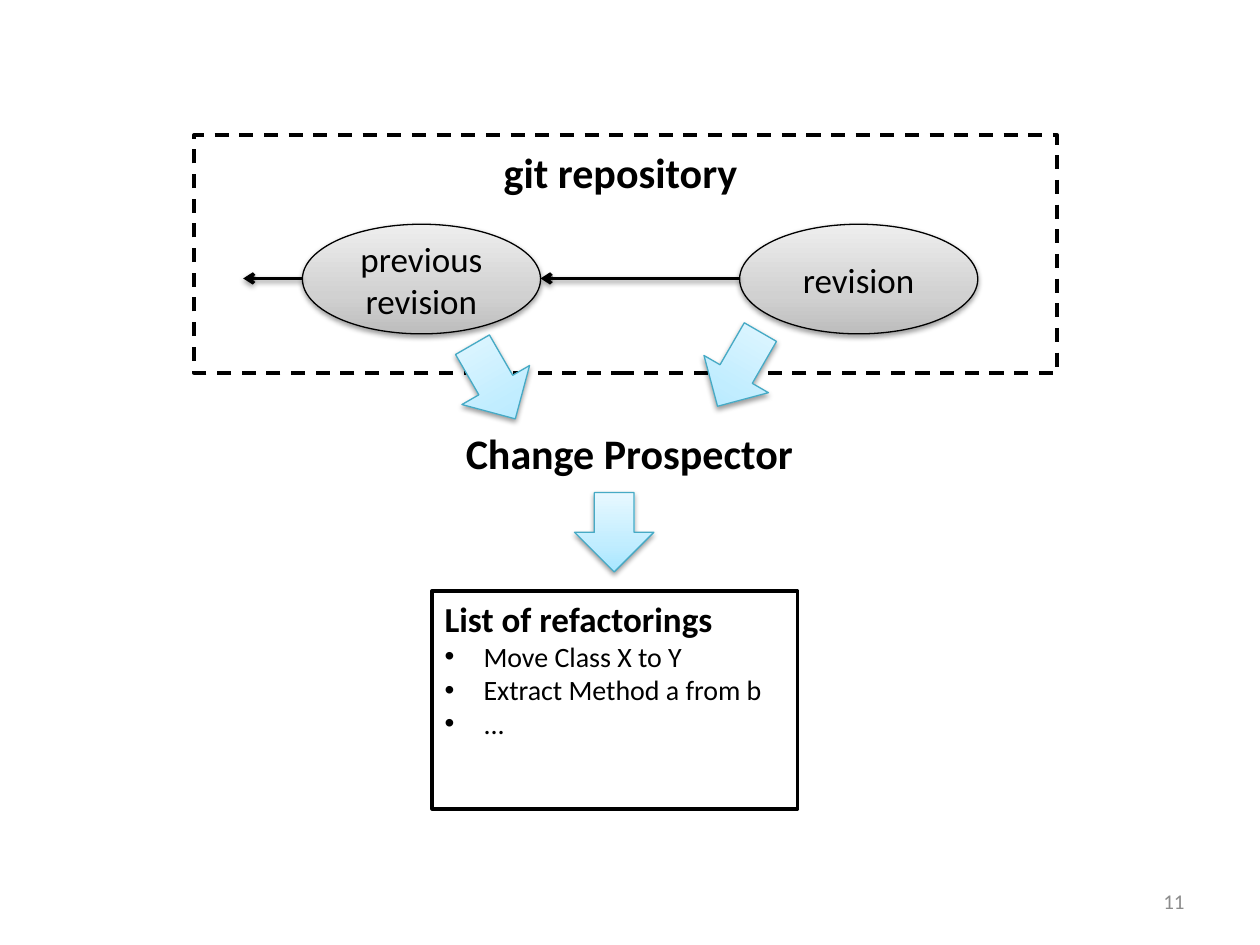
"""Build a slide showing how refactorings are found in a git repository."""
from dataclasses import dataclass
import copy

import lxml.etree
import pptx
import pptx.dml.color
import pptx.enum.dml
import pptx.enum.shapes
import pptx.enum.text
import pptx.oxml.ns
import pptx.util

Inches = pptx.util.Inches
Pt = pptx.util.Pt
qn = pptx.oxml.ns.qn
Shape = pptx.enum.shapes.MSO_SHAPE
Align = pptx.enum.text.PP_ALIGN
Anchor = pptx.enum.text.MSO_ANCHOR

COLORS = {
    "black": "000000",
    "white": "FFFFFF",
    "number": "8C8C8C",
    "arrow_line": "46AAC5",
    "gray_dark": "BDBDBD",
    "gray_middle": "D1D1D1",
    "gray_light": "EEEEEE",
    "blue_dark": "A7E6FF",
    "blue_middle": "C1EDFF",
    "blue_light": "E7F8FF",
}
STOP_POSITIONS = (0, 0.35, 1)
REVISION_TOP, REVISION_WIDTH, REVISION_HEIGHT = 1.78, 1.89, 0.87
REVISION_MIDDLE = 2.21


@dataclass(frozen=True)
class Box:
    left: float
    top: float
    width: float
    height: float

    def lengths(self) -> tuple:
        return tuple(Inches(value) for value in (self.left, self.top, self.width, self.height))


@dataclass(frozen=True)
class Revision:
    left: float
    label: str


@dataclass(frozen=True)
class FlowArrow:
    box: Box
    rotation: float = 0


@dataclass(frozen=True)
class HistoryLink:
    start: float
    end: float


REVISIONS = (Revision(5.87, "revision"), Revision(2.4, "previous revision"))
HISTORY_LINKS = (HistoryLink(5.87, 4.29), HistoryLink(2.4, 1.93))
FLOW_ARROWS = (
    FlowArrow(Box(4.56, 3.91, 0.63, 0.63)),
    FlowArrow(Box(3.61, 2.69, 0.62, 0.68), 330),
    FlowArrow(Box(5.57, 2.59, 0.59, 0.68), 30),
)
REFACTORINGS = ("Move Class X to Y", "Extract Method a from b", "...")


def rgb(name: str) -> pptx.dml.color.RGBColor:
    return pptx.dml.color.RGBColor.from_string(COLORS[name])


def write_text(frame, text: str, *, size: float, color: str = "black", bold: bool = False,
               align=Align.LEFT, anchor=Anchor.TOP, space_before: float = 0,
               bullet: bool = False, append: bool = False) -> None:
    frame.word_wrap = True
    frame.vertical_anchor = anchor
    paragraph = frame.add_paragraph() if append else frame.paragraphs[0]
    paragraph.alignment = align
    paragraph.space_before = Pt(space_before)
    run = paragraph.add_run()
    run.text = text
    run.font.name = "Calibri"
    run.font.size = Pt(size)
    run.font.bold = bold
    run.font.color.rgb = rgb(color)
    if bullet:
        properties = paragraph._p.get_or_add_pPr()
        properties.set("marL", str(Inches(0.31)))
        properties.set("indent", str(-Inches(0.31)))
        lxml.etree.SubElement(properties, qn("a:buFont"), typeface="Arial")
        lxml.etree.SubElement(properties, qn("a:buChar"), char="•")


def add_label(slide, box: Box, text: str, **text_format) -> None:
    label = slide.shapes.add_textbox(*box.lengths())
    write_text(label.text_frame, text, **text_format)


def add_outlined_shape(slide, kind, box: Box, line: str = "black", line_width: float = 2):
    shape = slide.shapes.add_shape(kind, *box.lengths())
    shape.shadow.inherit = False
    shape.fill.solid()
    shape.fill.fore_color.rgb = rgb("white")
    shape.line.color.rgb = rgb(line)
    shape.line.width = Pt(line_width)
    return shape


def add_soft_shadow(shape) -> None:
    properties = shape._element.spPr
    effects = properties.find(qn("a:effectLst"))
    if effects is None:
        effects = lxml.etree.SubElement(properties, qn("a:effectLst"))
    shadow = lxml.etree.SubElement(
        effects, qn("a:outerShdw"), blurRad=str(Pt(3.1)), dist=str(Pt(1.6)),
        dir="5400000", rotWithShape="0")
    color = lxml.etree.SubElement(shadow, qn("a:srgbClr"), val=COLORS["black"])
    lxml.etree.SubElement(color, qn("a:alpha"), val="38000")


def add_gradient_shape(slide, kind, box: Box, palette: str, line: str):
    shape = add_outlined_shape(slide, kind, box, line, 0.75)
    shape.fill.gradient()
    shape.fill.gradient_angle = 90
    stop_list = shape._element.spPr.find(f"{qn('a:gradFill')}/{qn('a:gsLst')}")
    stop_list.append(copy.deepcopy(stop_list[0]))
    tones = ("dark", "middle", "light")
    for stop, position, tone in zip(shape.fill.gradient_stops, STOP_POSITIONS, tones):
        stop.position = position
        stop.color.rgb = rgb(f"{palette}_{tone}")
    add_soft_shadow(shape)
    return shape


def add_revision(slide, revision: Revision) -> None:
    box = Box(revision.left, REVISION_TOP, REVISION_WIDTH, REVISION_HEIGHT)
    ellipse = add_gradient_shape(slide, Shape.OVAL, box, "gray", "black")
    write_text(ellipse.text_frame, revision.label, size=20, align=Align.CENTER, anchor=Anchor.MIDDLE)


def add_history_link(slide, link: HistoryLink) -> None:
    connector = slide.shapes.add_connector(
        pptx.enum.shapes.MSO_CONNECTOR.STRAIGHT, Inches(link.start), Inches(REVISION_MIDDLE),
        Inches(link.end), Inches(REVISION_MIDDLE))
    connector.line.color.rgb = rgb("black")
    connector.line.width = Pt(2)
    line = connector._element.spPr.find(qn("a:ln"))
    lxml.etree.SubElement(line, qn("a:tailEnd"), type="arrow")
    add_soft_shadow(connector)


def add_flow_arrow(slide, arrow: FlowArrow) -> None:
    shape = add_gradient_shape(slide, Shape.DOWN_ARROW, arrow.box, "blue", "arrow_line")
    shape.rotation = arrow.rotation


def add_refactoring_list(slide) -> None:
    frame = add_outlined_shape(slide, Shape.RECTANGLE, Box(3.43, 4.69, 2.9, 1.73)).text_frame
    write_text(frame, "List of refactorings", size=20, bold=True)
    for refactoring in REFACTORINGS:
        write_text(frame, refactoring, size=16, bullet=True, append=True)


def main() -> None:
    presentation = pptx.Presentation()
    presentation.slide_width = Inches(10)
    presentation.slide_height = Inches(7.5)
    slide = presentation.slides.add_slide(presentation.slide_layouts[6])

    repository = add_outlined_shape(slide, Shape.RECTANGLE, Box(1.54, 1.07, 6.85, 1.89))
    repository.line.dash_style = pptx.enum.dml.MSO_LINE.DASH
    add_label(slide, Box(7.17, 6.95, 2.33, 0.4), "11", size=12, color="number",
              align=Align.RIGHT, anchor=Anchor.MIDDLE)
    for revision in REVISIONS:
        add_revision(slide, revision)
    for link in HISTORY_LINKS:
        add_history_link(slide, link)
    add_label(slide, Box(3.35, 1.11, 3.15, 0.5), "git repository", size=24, bold=True,
              align=Align.CENTER)
    add_refactoring_list(slide)
    add_label(slide, Box(3.18, 3.2, 3.63, 0.78), "Change Prospector", size=24, bold=True,
              align=Align.CENTER, anchor=Anchor.MIDDLE, space_before=4.8)
    for arrow in FLOW_ARROWS:
        add_flow_arrow(slide, arrow)
    presentation.save("out.pptx")


if __name__ == "__main__":
    main()
